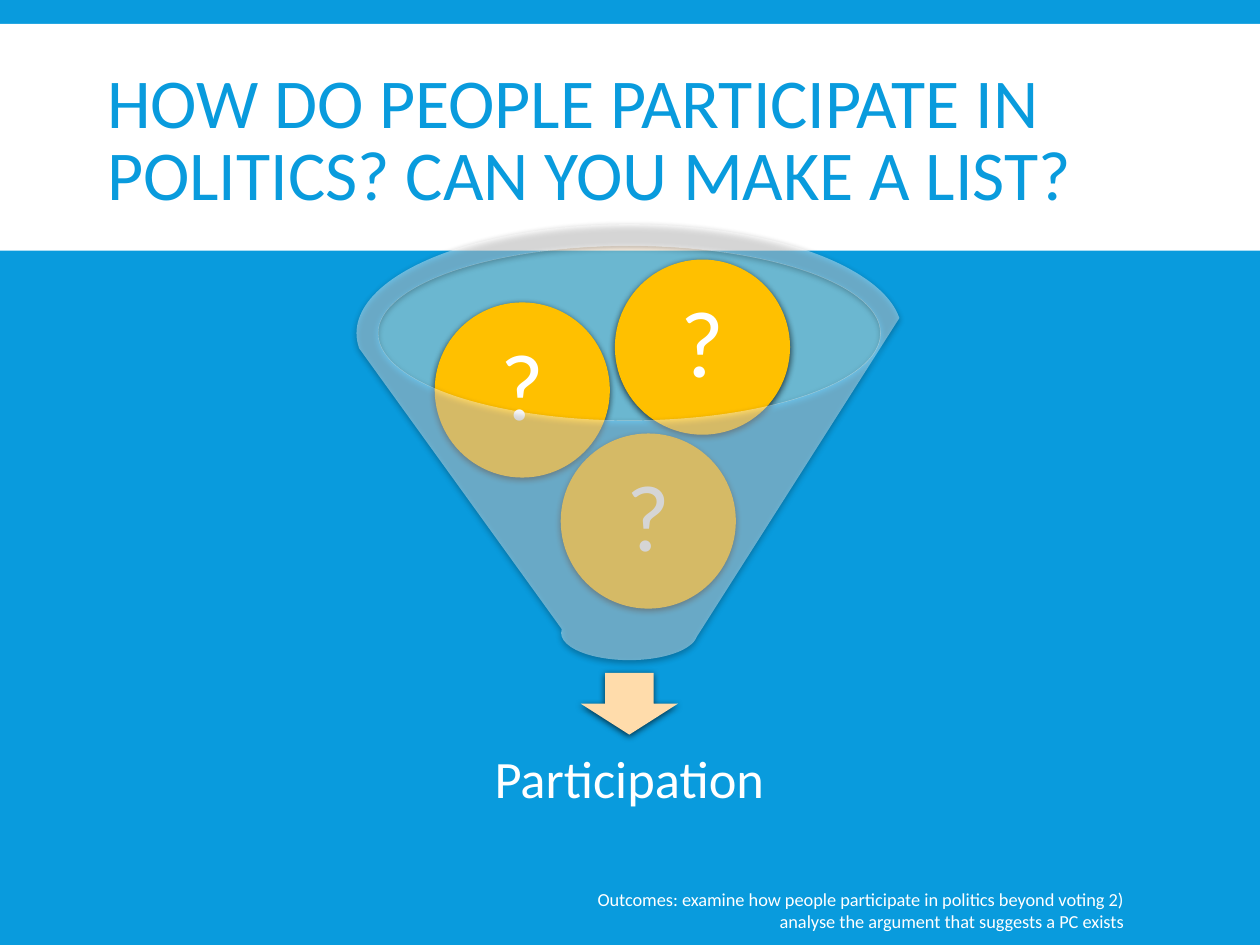
from lxml import etree
from pptx import Presentation
from pptx.dml.color import RGBColor
from pptx.enum import shapes, text
from pptx.oxml import ns
from pptx.util import Inches, Pt

BLUE = RGBColor(0x09, 0x9B, 0xDD)
WHITE = RGBColor(0xFF, 0xFF, 0xFF)
GOLD = RGBColor(0xFF, 0xC0, 0x00)
PEACH = RGBColor(0xFF, 0xDC, 0xAB)
PALE_PEACH = RGBColor(0xFF, 0xE2, 0xBD)
FONT = "Calibri"

# Content
TITLE = "HOW DO PEOPLE PARTICIPATE IN POLITICS? CAN YOU MAKE A LIST?"
RESULT = "Participation"
OUTCOMES = ("Outcomes: examine how people participate in politics beyond voting 2) "
            "analyse the argument that suggests a PC exists")
BALL_SIZE = 1.39
BALLS = [("?", 4.45, 3.44), ("?", 3.45, 2.4), ("?", 4.88, 2.06)]

PRESET = shapes.MSO_SHAPE
ALIGN = text.PP_ALIGN


def write(shape, words, size, color=WHITE, align=ALIGN.LEFT, spacing=1.0, inset=None):
    frame = shape.text_frame
    frame.word_wrap = True
    frame.auto_size = text.MSO_AUTO_SIZE.NONE
    frame.vertical_anchor = text.MSO_ANCHOR.MIDDLE
    if inset is not None:
        frame.margin_left = frame.margin_right = Inches(inset)
        frame.margin_top = frame.margin_bottom = Inches(inset)
    paragraph = frame.paragraphs[0]
    paragraph.alignment = align
    paragraph.line_spacing = spacing
    run = paragraph.add_run()
    run.text = words
    run.font.name = FONT
    run.font.size = Pt(size)
    run.font.color.rgb = color


def add_xml(parent, tag, **attributes):
    return etree.SubElement(parent, ns.qn(tag), attributes)


def draw(slide, preset, box, color, opacity=100, shadow=False):
    shape = slide.shapes.add_shape(preset, *map(Inches, box))
    shape.shadow.inherit = False
    shape.fill.solid()
    shape.fill.fore_color.rgb = color
    shape.line.fill.background()
    properties = shape._element.spPr
    if opacity < 100:
        tint = properties.find(".//" + ns.qn("a:srgbClr"))
        add_xml(tint, "a:alpha", val=str(opacity * 1000))
    if shadow:
        effects = properties.find(ns.qn("a:effectLst"))
        outer = add_xml(effects, "a:outerShdw", blurRad=str(Pt(4)), dist=str(Pt(1.2)),
                        dir="5400000", algn="ctr", rotWithShape="0")
        black = add_xml(outer, "a:srgbClr", val="000000")
        add_xml(black, "a:alpha", val="68000")
    return shape


def add_label(slide, box, words, size, **style):
    write(slide.shapes.add_textbox(*map(Inches, box)), words, size, **style)


def main():
    deck = Presentation()
    deck.slide_width, deck.slide_height = Inches(10), Inches(7.5)
    slide = deck.slides.add_slide(deck.slide_layouts[5])
    slide.background.fill.solid()
    slide.background.fill.fore_color.rgb = BLUE

    # Title on a white band, which goes behind it
    band = draw(slide, PRESET.RECTANGLE, (0, 0.19, 10, 1.8), WHITE)
    title = slide.shapes.title
    title._element.addprevious(band._element)
    title.left, title.top = Inches(0.75), Inches(0.31)
    title.width, title.height = Inches(8.5), Inches(1.65)
    write(title, TITLE, 40, color=BLUE, spacing=0.85)

    # Funnel mouth, arrow and result
    draw(slide, PRESET.OVAL, (3, 1.95, 3.99, 1.39), PALE_PEACH, opacity=40)
    draw(slide, PRESET.DOWN_ARROW, (4.61, 5.34, 0.77, 0.49), PEACH, shadow=True)
    add_label(slide, (3.14, 5.74, 3.71, 0.93), RESULT, 30,
              align=ALIGN.CENTER, spacing=0.9, inset=0.23)

    # Balls, seen through the funnel in front of them
    for words, left, top in BALLS:
        ball = draw(slide, PRESET.OVAL, (left, top, BALL_SIZE, BALL_SIZE), GOLD, shadow=True)
        write(ball, words, 54, align=ALIGN.CENTER, spacing=0.9, inset=0.07)
    draw(slide, PRESET.FUNNEL, (2.83, 1.78, 4.33, 3.46), WHITE, opacity=40, shadow=True)

    # Footer
    add_label(slide, (4.58, 7.02, 4.44, 0.4), OUTCOMES, 10.5, align=ALIGN.RIGHT)

    deck.save("out.pptx")


if __name__ == "__main__":
    main()
